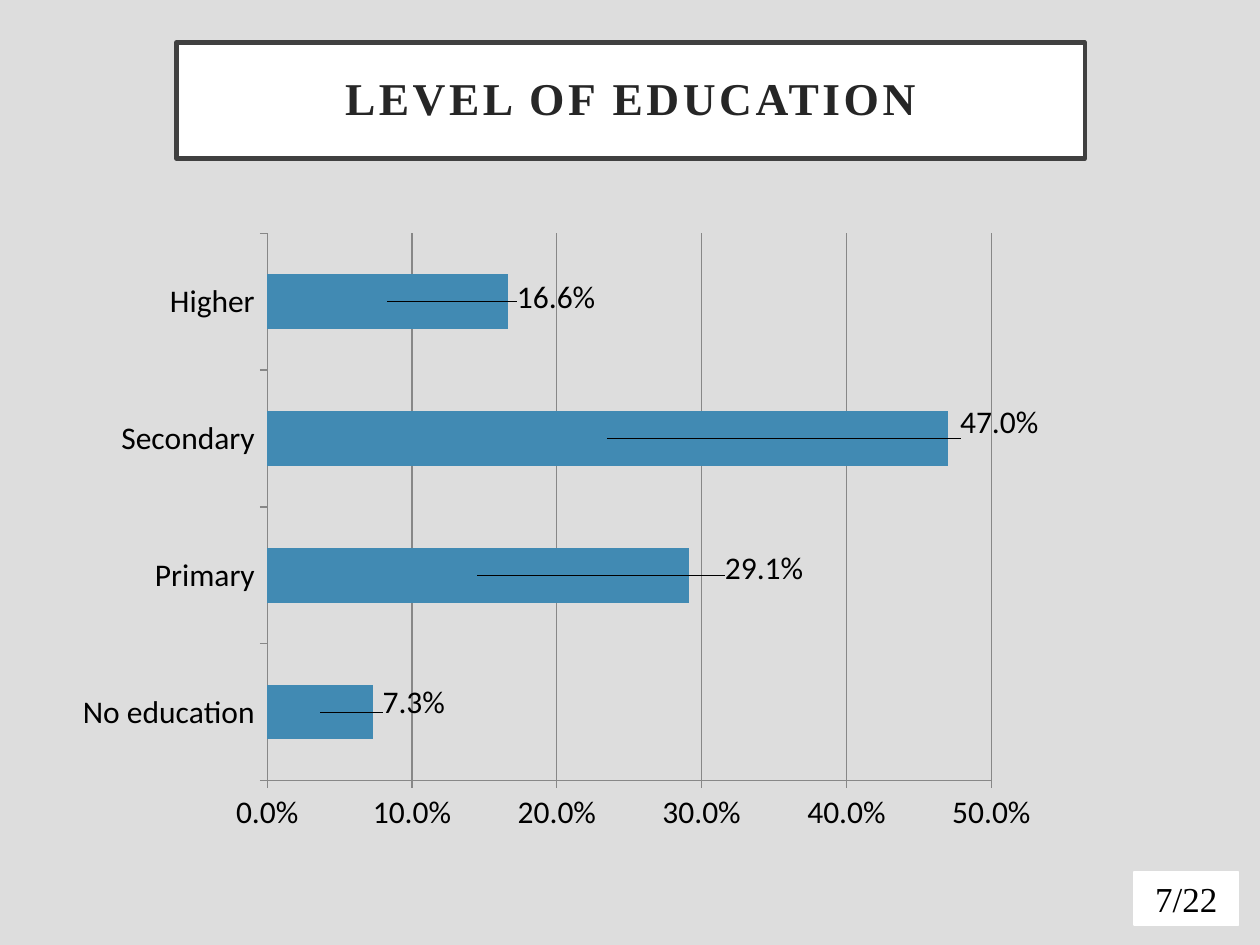
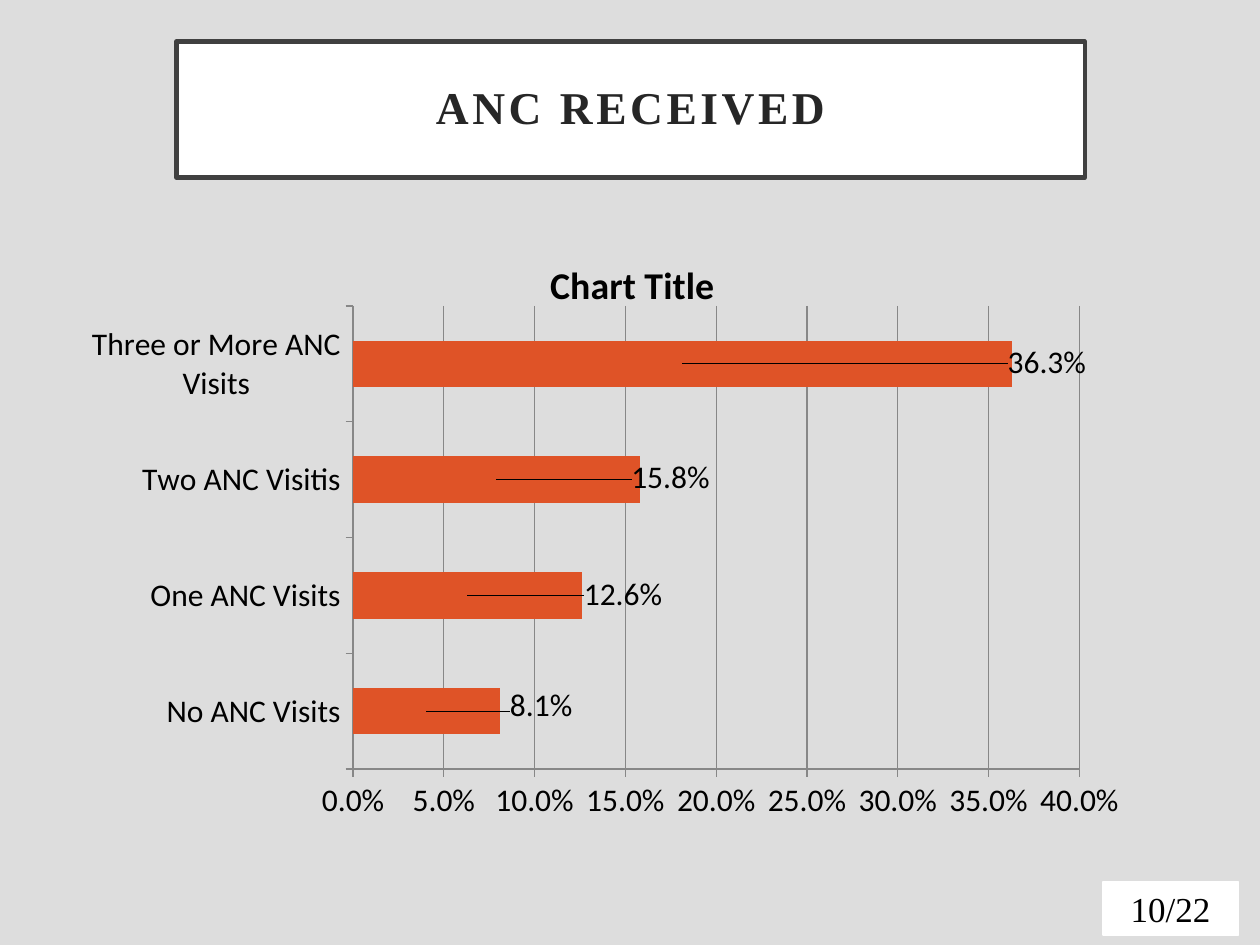
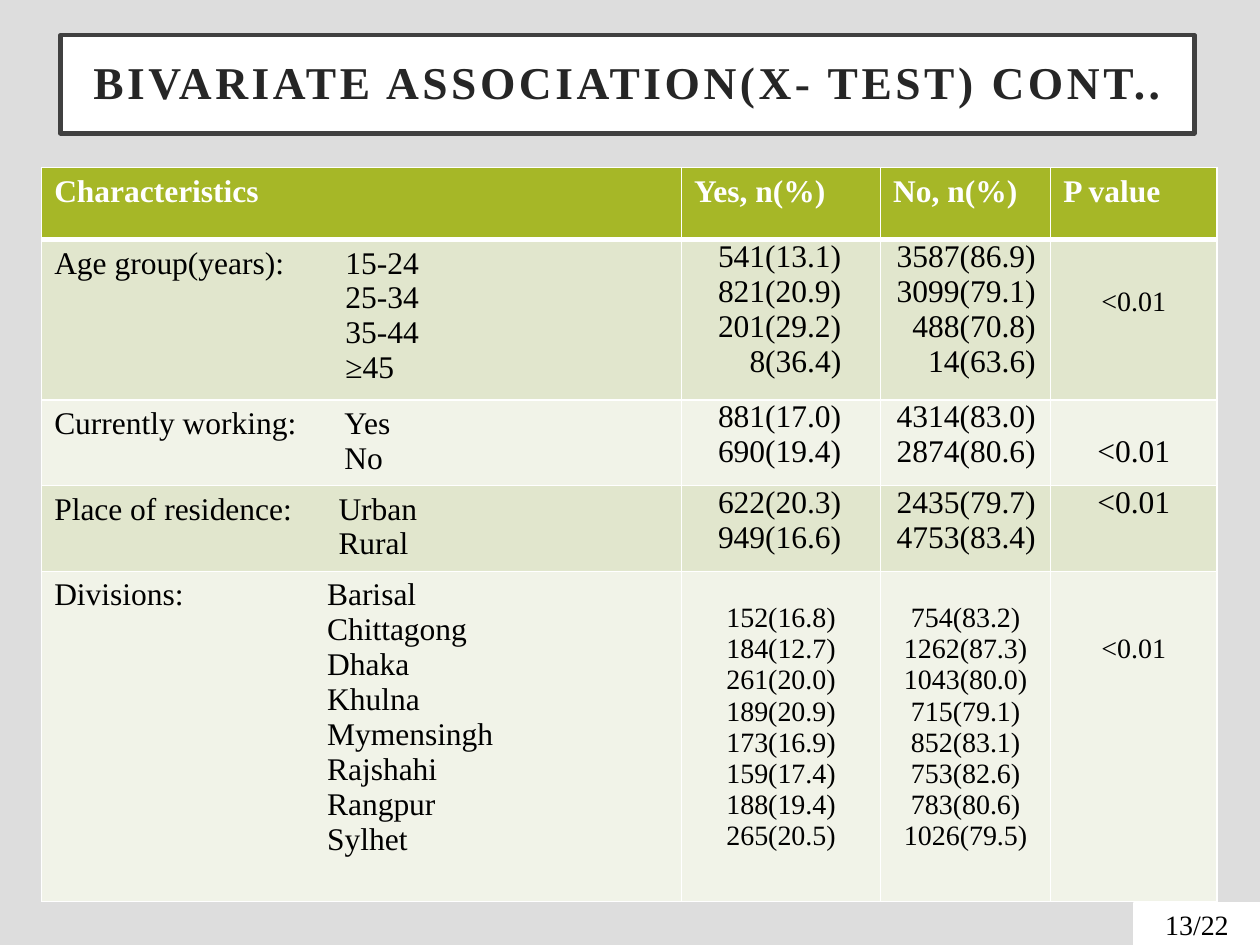
from lxml import etree
from pptx import Presentation
from pptx.chart.data import CategoryChartData
from pptx.dml.color import RGBColor
from pptx.enum.chart import XL_CHART_TYPE, XL_LABEL_POSITION, XL_TICK_MARK
from pptx.enum.shapes import MSO_SHAPE
from pptx.enum.text import MSO_ANCHOR, PP_ALIGN
from pptx.oxml.ns import qn
from pptx.util import Cm, Pt

BAR_STACKED = XL_CHART_TYPE.BAR_STACKED
LABEL_CENTER = XL_LABEL_POSITION.CENTER
TICK_OUTSIDE = XL_TICK_MARK.OUTSIDE
RECTANGLE = MSO_SHAPE.RECTANGLE
MIDDLE = MSO_ANCHOR.MIDDLE
LEFT, CENTER, RIGHT = PP_ALIGN.LEFT, PP_ALIGN.CENTER, PP_ALIGN.RIGHT

SERIF, SANS = "Times New Roman", "Calibri"
BACKGROUND, WHITE, BLACK = "DDDDDD", "FFFFFF", "000000"
FRAME, TITLE_TEXT, AXIS = "404040", "262626", "878787"
BLUE, ORANGE = "418AB3", "DF5327"
HEADER, BAND_DARK, BAND_LIGHT = "A6B727", "E1E6CD", "F1F3E8"

EDUCATION = {
    "No education": (0.073, 0.095, -0.015),
    "Primary": (0.291, 0.29, -0.012),
    "Secondary": (0.47, 0.397, -0.026),
    "Higher": (0.166, 0.171, -0.007),
}
ANC_VISITS = {
    "No ANC Visits": (0.081, 0.106, -0.01),
    "One ANC Visits": (0.126, 0.144, -0.002),
    "Two ANC Visitis": (0.158, 0.161, -0.004),
    "Three or More ANC Visits": (0.363, 0.337, -0.003),
}

COLUMN_WIDTHS = [12.9, 4.01, 3.43, 3.35]
ROW_HEIGHTS = [1.45, 3.23, 1.73, 1.73, 6.65]
HEADINGS = ["Characteristics", "Yes, n(%)", "No, n(%)", "P value"]
GROUPS = [
    {
        "name": "Age group(years):", "indent": 5.87,
        "levels": ["15-24", "25-34", "35-44", "≥45"],
        "yes": ["541(13.1)", "821(20.9)", "201(29.2)", "8(36.4)"],
        "no": ["3587(86.9)", "3099(79.1)", "488(70.8)", "14(63.6)"],
        "size": 18, "align": RIGHT, "top": 0, "p_size": 16, "p_top": 0.94,
    },
    {
        "name": "Currently working:", "indent": 5.85,
        "levels": ["Yes", "No"],
        "yes": ["881(17.0)", "690(19.4)"],
        "no": ["4314(83.0)", "2874(80.6)"],
        "size": 18, "align": RIGHT, "top": 0, "p_size": 18, "p_top": 0.7,
    },
    {
        "name": "Place of residence:", "indent": 5.73,
        "levels": ["Urban", "Rural"],
        "yes": ["622(20.3)", "949(16.6)"],
        "no": ["2435(79.7)", "4753(83.4)"],
        "size": 18, "align": RIGHT, "top": 0, "p_size": 18, "p_top": 0,
    },
    {
        "name": "Divisions:", "indent": 5.5,
        "levels": ["Barisal", "Chittagong", "Dhaka", "Khulna",
                   "Mymensingh", "Rajshahi", "Rangpur", "Sylhet"],
        "yes": ["152(16.8)", "184(12.7)", "261(20.0)", "189(20.9)",
                "173(16.9)", "159(17.4)", "188(19.4)", "265(20.5)"],
        "no": ["754(83.2)", "1262(87.3)", "1043(80.0)", "715(79.1)",
               "852(83.1)", "753(82.6)", "783(80.6)", "1026(79.5)"],
        "size": 16, "align": CENTER, "top": 0.63, "p_size": 16, "p_top": 1.25,
    },
]


def color(value):
    return RGBColor.from_string(value)


def lengths(box):
    return [Cm(value) for value in box]


def style_font(font, name, size, value, bold=False):
    font.name = name
    font.size = Pt(size)
    font.color.rgb = color(value)
    font.bold = bold


def add_slide(presentation):
    slide = presentation.slides.add_slide(presentation.slide_layouts[6])
    slide.background.fill.solid()
    slide.background.fill.fore_color.rgb = color(BACKGROUND)
    return slide


def add_text_box(slide, box, text, size, text_color, line_color, line_width, bold=False):
    shape = slide.shapes.add_shape(RECTANGLE, *lengths(box))
    shape.shadow.inherit = False
    shape.fill.solid()
    shape.fill.fore_color.rgb = color(WHITE)
    shape.line.color.rgb = color(line_color)
    shape.line.width = Pt(line_width)
    frame = shape.text_frame
    frame.word_wrap = True
    frame.vertical_anchor = MIDDLE
    paragraph = frame.paragraphs[0]
    paragraph.text = text
    paragraph.alignment = CENTER
    style_font(paragraph.font, SERIF, size, text_color, bold)
    return frame


def add_title(slide, box, text):
    frame = add_text_box(slide, box, text, 26, TITLE_TEXT, FRAME, 2.5, True)
    frame.margin_left = frame.margin_right = Cm(0.5)
    frame.margin_top = frame.margin_bottom = Cm(0.5)
    paragraph = frame.paragraphs[0]
    paragraph.line_spacing = 0.9
    paragraph.runs[0]._r.get_or_add_rPr().set("spc", "200")


def add_page_number(slide, box, text, size=20):
    add_text_box(slide, box, text, size, BLACK, WHITE, 1)


def set_layout(parent, position, **settings):
    for old_layout in parent.findall(qn("c:layout")):
        parent.remove(old_layout)
    layout = etree.Element(qn("c:layout"))
    manual = etree.SubElement(layout, qn("c:manualLayout"))
    for name, value in settings.items():
        etree.SubElement(manual, qn(f"c:{name}")).set("val", str(value))
    parent.insert(position, layout)


def style_axis(axis):
    axis.major_tick_mark = TICK_OUTSIDE
    axis.format.line.color.rgb = color(AXIS)
    axis.format.line.width = Pt(0.75)


def add_bar_chart(slide, box, bars, bar_color, maximum, step, plot_box, title=None):
    data = CategoryChartData(number_format="0.0%")
    data.categories = list(bars)
    data.add_series("Series 1", [value for value, _, _ in bars.values()])
    chart = slide.shapes.add_chart(BAR_STACKED, *lengths(box), data).chart
    style_font(chart.font, SANS, 18, BLACK)
    chart.has_legend = False
    chart.has_title = title is not None
    if title:
        paragraph = chart.chart_title.text_frame.paragraphs[0]
        paragraph.text = title
        style_font(paragraph.font, SANS, 21.6, BLACK, True)
        set_layout(chart.element.find(".//" + qn("c:title")), 1,
                   xMode="edge", yMode="edge", x=0.42, y=0.05)

    style_axis(chart.category_axis)
    value_axis = chart.value_axis
    style_axis(value_axis)
    value_axis.minimum_scale = 0
    value_axis.maximum_scale = maximum
    value_axis.major_unit = step
    value_axis.tick_labels.number_format = "0.0%"
    value_axis.tick_labels.number_format_is_linked = False
    value_axis.major_gridlines.format.line.color.rgb = color(AXIS)
    value_axis.major_gridlines.format.line.width = Pt(0.75)

    plot = chart.plots[0]
    plot.gap_width = 150
    plot.overlap = 100
    plot.vary_by_categories = False
    series = plot.series[0]
    series.format.fill.solid()
    series.format.fill.fore_color.rgb = color(bar_color)
    series.data_labels.show_value = True
    series.data_labels.number_format = "0.0%"
    series.data_labels.number_format_is_linked = False
    for index, (_, shift_x, shift_y) in enumerate(bars.values()):
        series.points[index].data_label.position = LABEL_CENTER
        label = series.data_labels._element.findall(qn("c:dLbl"))[index]
        set_layout(label, 1, x=shift_x, y=shift_y)

    x, y, width, height = plot_box
    set_layout(chart.element.find(".//" + qn("c:plotArea")), 0,
               layoutTarget="inner", xMode="edge", yMode="edge",
               x=x, y=y, w=width, h=height)


def set_borders(cell, top, bottom):
    properties = cell._tc.get_or_add_tcPr()
    for side, width in (("L", 1), ("R", 1), ("T", top), ("B", bottom)):
        line = etree.SubElement(properties, qn(f"a:ln{side}"), w=str(Pt(width)))
        fill = etree.SubElement(line, qn("a:solidFill"))
        etree.SubElement(fill, qn("a:srgbClr"), val=WHITE)


def fill_cell(cell, lines, fill, size=18, text_color=BLACK, bold=False, align=LEFT):
    cell.fill.solid()
    cell.fill.fore_color.rgb = color(fill)
    frame = cell.text_frame
    frame.text = "\n".join(lines)
    for paragraph in frame.paragraphs:
        paragraph.alignment = align
        style_font(paragraph.font, SERIF, size, text_color, bold)


def fill_value_cell(cell, lines, fill, size, align, top, right=0.18):
    fill_cell(cell, lines, fill, size, align=align)
    cell.margin_left = Cm(0.18)
    cell.margin_right = Cm(right)
    cell.margin_top = Cm(top)
    cell.margin_bottom = 0


def fill_level_cell(cell, group, fill):
    first, *others = group["levels"]
    fill_cell(cell, [f"{group['name']}\t{first}", *others], fill)
    indent = str(Cm(group["indent"]))
    first_paragraph, *other_paragraphs = cell.text_frame.paragraphs
    tabs = etree.SubElement(first_paragraph._p.get_or_add_pPr(), qn("a:tabLst"))
    etree.SubElement(tabs, qn("a:tab"), pos=indent, algn="l")
    properties = first_paragraph._p.get_or_add_pPr()
    default_font = properties.find(qn("a:defRPr"))
    if default_font is not None:
        default_font.addprevious(tabs)
    for paragraph in other_paragraphs:
        paragraph._p.get_or_add_pPr().set("marL", indent)


def add_association_table(slide):
    box = (0.84, 3.38, sum(COLUMN_WIDTHS), sum(ROW_HEIGHTS))
    table = slide.shapes.add_table(
        len(ROW_HEIGHTS), len(COLUMN_WIDTHS), *lengths(box)).table
    for column, width in zip(table.columns, COLUMN_WIDTHS):
        column.width = Cm(width)
    for index, (row, height) in enumerate(zip(table.rows, ROW_HEIGHTS)):
        row.height = Cm(height)
        for cell in row.cells:
            set_borders(cell, 3 if index == 1 else 1, 3 if index == 0 else 1)

    for column, heading in enumerate(HEADINGS):
        fill_cell(table.cell(0, column), [heading], HEADER, text_color=WHITE, bold=True)
    for row, group in enumerate(GROUPS, start=1):
        fill = BAND_DARK if row % 2 else BAND_LIGHT
        fill_level_cell(table.cell(row, 0), group, fill)
        for column, answer, right in ((1, "yes", 0.79), (2, "no", 0.3)):
            align = group["align"]
            fill_value_cell(table.cell(row, column), group[answer], fill, group["size"],
                            align, group["top"], right if align == RIGHT else 0.18)
        fill_value_cell(table.cell(row, 3), ["<0.01"], fill,
                        group["p_size"], CENTER, group["p_top"])


def main():
    presentation = Presentation()
    presentation.slide_width = Cm(25.4)
    presentation.slide_height = Cm(19.05)

    slide = add_slide(presentation)
    add_title(slide, (3.56, 0.86, 18.31, 2.34), "LEVEL OF EDUCATION")
    add_bar_chart(slide, (1.27, 4.45, 19.89, 12.57), EDUCATION, BLUE, 0.5, 0.1,
                  (0.207, 0.02, 0.734, 0.878))
    add_page_number(slide, (22.86, 17.58, 2.11, 1.07), "7/22")

    slide = add_slide(presentation)
    add_title(slide, (3.56, 0.84, 18.31, 2.74), "ANC RECEIVED")
    add_bar_chart(slide, (1.8, 4.45, 21.79, 12.19), ANC_VISITS, ORANGE, 0.4, 0.05,
                  (0.244, 0.141, 0.672, 0.766), "Chart Title")
    add_page_number(slide, (22.23, 17.78, 2.74, 1.07), "10/22")

    slide = add_slide(presentation)
    add_title(slide, (1.22, 0.71, 22.86, 1.98), "BIVARIATE ASSOCIATION(X- TEST) CONT..")
    add_association_table(slide)
    add_page_number(slide, (22.86, 18.21, 2.54, 0.84), "13/22", 16)

    presentation.save("out.pptx")


if __name__ == "__main__":
    main()
